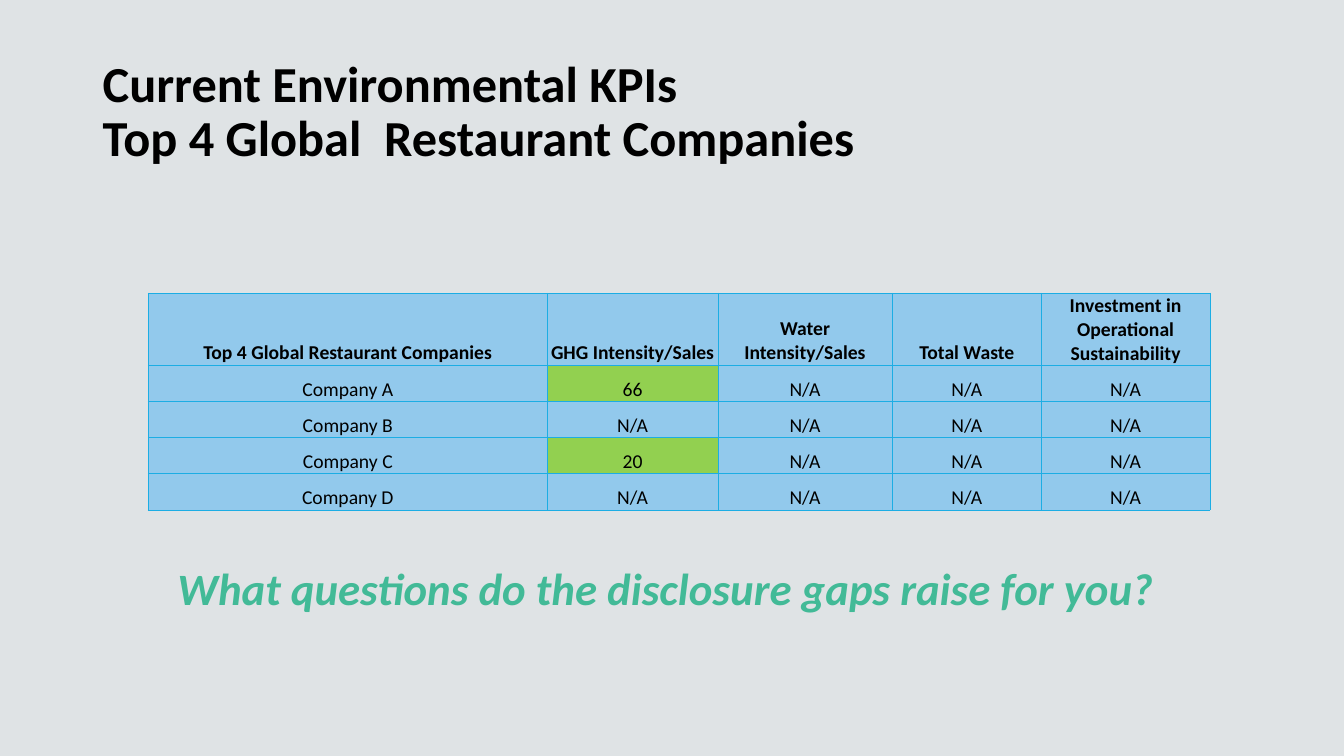
import pptx
import pptx.dml.color
import pptx.enum.text
import pptx.oxml
import pptx.oxml.ns
import pptx.util

Inches = pptx.util.Inches
RGBColor = pptx.dml.color.RGBColor
ANCHOR = pptx.enum.text.MSO_ANCHOR
ALIGN = pptx.enum.text.PP_ALIGN

BACKGROUND = RGBColor(0xDF, 0xE3, 0xE5)
BLACK = RGBColor(0, 0, 0)
TEAL = RGBColor(0x42, 0xBA, 0x97)
CELL_BLUE = RGBColor(0x92, 0xC9, 0xEC)
DISCLOSED_GREEN = RGBColor(0x92, 0xD0, 0x50)
BORDER_BLUE = RGBColor(0x1C, 0xAD, 0xE4)

HEADERS = ["Top 4 Global Restaurant Companies", "GHG Intensity/Sales",
           "Water Intensity/Sales", "Total Waste",
           "Investment in Operational Sustainability"]
GHG_BY_COMPANY = {"Company A": "66", "Company B": "N/A",
                  "Company C": "20", "Company D": "N/A"}
COLUMN_WIDTHS = [3.96, 1.69, 1.73, 1.48, 1.67]
ROW_HEIGHTS = [0.71] + [0.36] * len(GHG_BY_COMPANY)


def set_attributes(target, values):
    for name, value in values.items():
        setattr(target, name, value)


class SlideBuilder:
    """Holds the text style and the current slide."""

    font_name = "Calibri"

    def __init__(self, slide):
        self.slide = slide

    def background(self, color):
        fill = self.slide.background.fill
        fill.solid()
        fill.fore_color.rgb = color

    def fill_text(self, text_frame, text, font, color=BLACK, **paragraph_format):
        paragraph = text_frame.paragraphs[0]
        paragraph.text = text
        set_attributes(paragraph, paragraph_format)
        for run in paragraph.runs:
            set_attributes(run.font, {"name": self.font_name, **font})
            run.font.color.rgb = color

    def text(self, box, text, font, color=BLACK, anchor=ANCHOR.TOP, **paragraph_format):
        shape = self.slide.shapes.add_textbox(*map(Inches, box))
        set_attributes(shape.text_frame, {"word_wrap": True, "vertical_anchor": anchor})
        self.fill_text(shape.text_frame, text, font, color, **paragraph_format)

    def borders(self, cell):
        properties = cell._tc.get_or_add_tcPr()
        for side in "LRTB":
            properties.append(pptx.oxml.parse_xml(
                f'<a:ln{side} {pptx.oxml.ns.nsdecls("a")} w="6350"><a:solidFill>'
                f'<a:srgbClr val="{BORDER_BLUE}"/></a:solidFill></a:ln{side}>'))

    def table(self, box, rows, widths, heights):
        frame = self.slide.shapes.add_table(len(rows), len(widths), *map(Inches, box))
        table = frame.table
        set_attributes(table, {"first_row": False, "horz_banding": False})
        for column, width in zip(table.columns, widths):
            column.width = Inches(width)
        for row, height in zip(table.rows, heights):
            row.height = Inches(height)
        for row_index, values in enumerate(rows):
            for column_index, value in enumerate(values):
                cell = table.cell(row_index, column_index)
                set_attributes(cell, {
                    "margin_left": Inches(0.01), "margin_right": Inches(0.01),
                    "margin_top": Inches(0.01), "margin_bottom": 0,
                    "vertical_anchor": ANCHOR.BOTTOM})
                self.borders(cell)
                cell.fill.solid()
                cell.fill.fore_color.rgb = DISCLOSED_GREEN if value.isdigit() else CELL_BLUE
                font = {"size": pptx.util.Pt(14), "bold": row_index == 0}
                self.fill_text(cell.text_frame, value, font, alignment=ALIGN.CENTER)


def main():
    presentation = pptx.Presentation()
    presentation.slide_width = Inches(13.33)
    presentation.slide_height = Inches(7.5)
    builder = SlideBuilder(presentation.slides.add_slide(presentation.slide_layouts[6]))
    builder.background(BACKGROUND)

    # Title
    builder.text((0.92, 0.4, 11.5, 1.45),
                 "Current Environmental KPIs\vTop 4 Global  Restaurant Companies",
                 {"size": pptx.util.Pt(36), "bold": True},
                 anchor=ANCHOR.MIDDLE, line_spacing=0.9)

    # Closing question
    builder.text((0, 5.51, 13.31, 0.64),
                 "What questions do the disclosure gaps raise for you? ",
                 {"size": pptx.util.Pt(32), "bold": True, "italic": True},
                 color=TEAL, alignment=ALIGN.CENTER)

    # Indicator table: only GHG intensity is ever disclosed
    rows = [HEADERS] + [[company, ghg] + ["N/A"] * 3
                        for company, ghg in GHG_BY_COMPANY.items()]
    builder.table((1.47, 2.91, sum(COLUMN_WIDTHS), sum(ROW_HEIGHTS)),
                  rows, COLUMN_WIDTHS, ROW_HEIGHTS)

    presentation.save("out.pptx")


if __name__ == "__main__":
    main()
